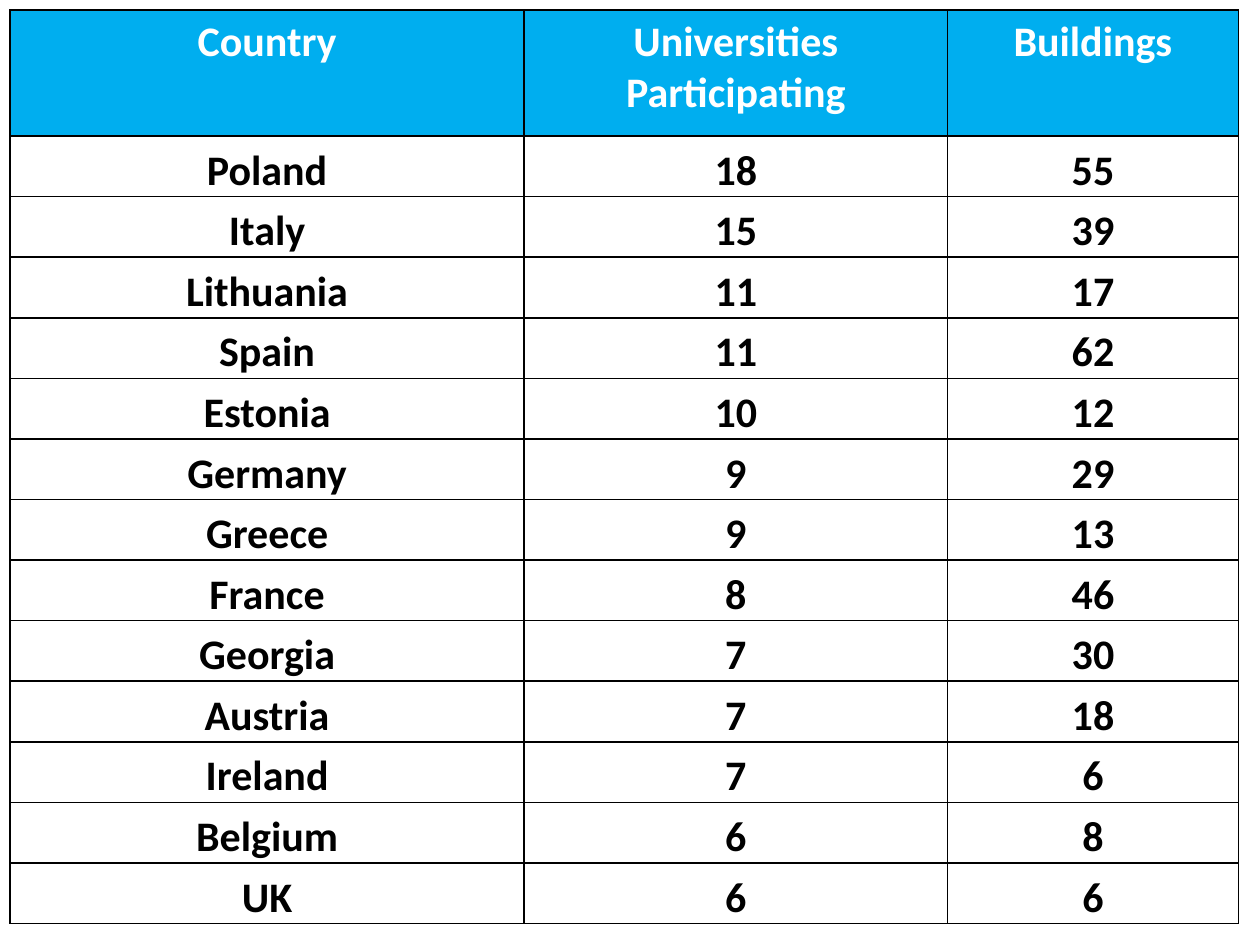
from lxml.etree import SubElement as Sub
from pptx import Presentation
from pptx.dml.color import RGBColor as RGB
from pptx.enum.text import MSO_ANCHOR as Anchor, PP_ALIGN as Align
from pptx.oxml.ns import qn
from pptx.util import Inches, Pt

BLUE = RGB(0x00, 0xAE, 0xEF)
WHITE = RGB(0xFF, 0xFF, 0xFF)
BLACK = RGB(0x00, 0x00, 0x00)

HEADS = ("Country", "Universities Participating", "Buildings")
ROWS = (
    ("Poland", 18, 55),
    ("Italy", 15, 39),
    ("Lithuania", 11, 17),
    ("Spain", 11, 62),
    ("Estonia", 10, 12),
    ("Germany", 9, 29),
    ("Greece", 9, 13),
    ("France", 8, 46),
    ("Georgia", 7, 30),
    ("Austria", 7, 18),
    ("Ireland", 7, 6),
    ("Belgium", 6, 8),
    ("UK", 6, 6),
)
COLS = (4.08, 3.36, 2.31)
HEAD = 1


def frame(cell):
    """Draw a thin black line on all four sides of the cell."""
    props = cell._tc.get_or_add_tcPr()
    for side in ("a:lnL", "a:lnR", "a:lnT", "a:lnB"):
        line = Sub(props, qn(side), w=str(Pt(1)))
        fill = Sub(line, qn("a:solidFill"))
        Sub(fill, qn("a:srgbClr"), val=str(BLACK))


def write(cell, text, color):
    cell.text = str(text)
    para = cell.text_frame.paragraphs[0]
    para.alignment = Align.CENTER
    font = para.font
    font.name, font.size, font.bold = "Calibri", Pt(24), True
    font.color.rgb = color


def style_head(cell):
    cell.fill.solid()
    cell.fill.fore_color.rgb = BLUE


def style_body(cell):
    cell.fill.background()
    cell.vertical_anchor = Anchor.BOTTOM
    cell.margin_left = cell.margin_right = cell.margin_top = Inches(0.01)
    cell.margin_bottom = 0


def add_counts(slide, left, top, width, height):
    """Place the table of universities and buildings by country."""
    data = (HEADS,) + ROWS
    table = slide.shapes.add_table(
        len(data), len(COLS), left, top, width, height).table
    table.horz_banding = False
    for col, share in zip(table.columns, COLS):
        col.width = int(width * share / sum(COLS))
    body = (height - Inches(HEAD)) // len(ROWS)
    for i, (row, texts) in enumerate(zip(table.rows, data)):
        row.height = body if i else Inches(HEAD)
        for cell, text in zip(row.cells, texts):
            frame(cell)
            write(cell, text, BLACK if i else WHITE)
            if i:
                style_body(cell)
            else:
                style_head(cell)


def main():
    deck = Presentation()
    deck.slide_width, deck.slide_height = Inches(10), Inches(7.5)
    slide = deck.slides.add_slide(deck.slide_layouts[6])
    add_counts(slide, Inches(0.08), Inches(0.08), Inches(9.75), Inches(7.25))
    deck.save("out.pptx")


if __name__ == "__main__":
    main()
